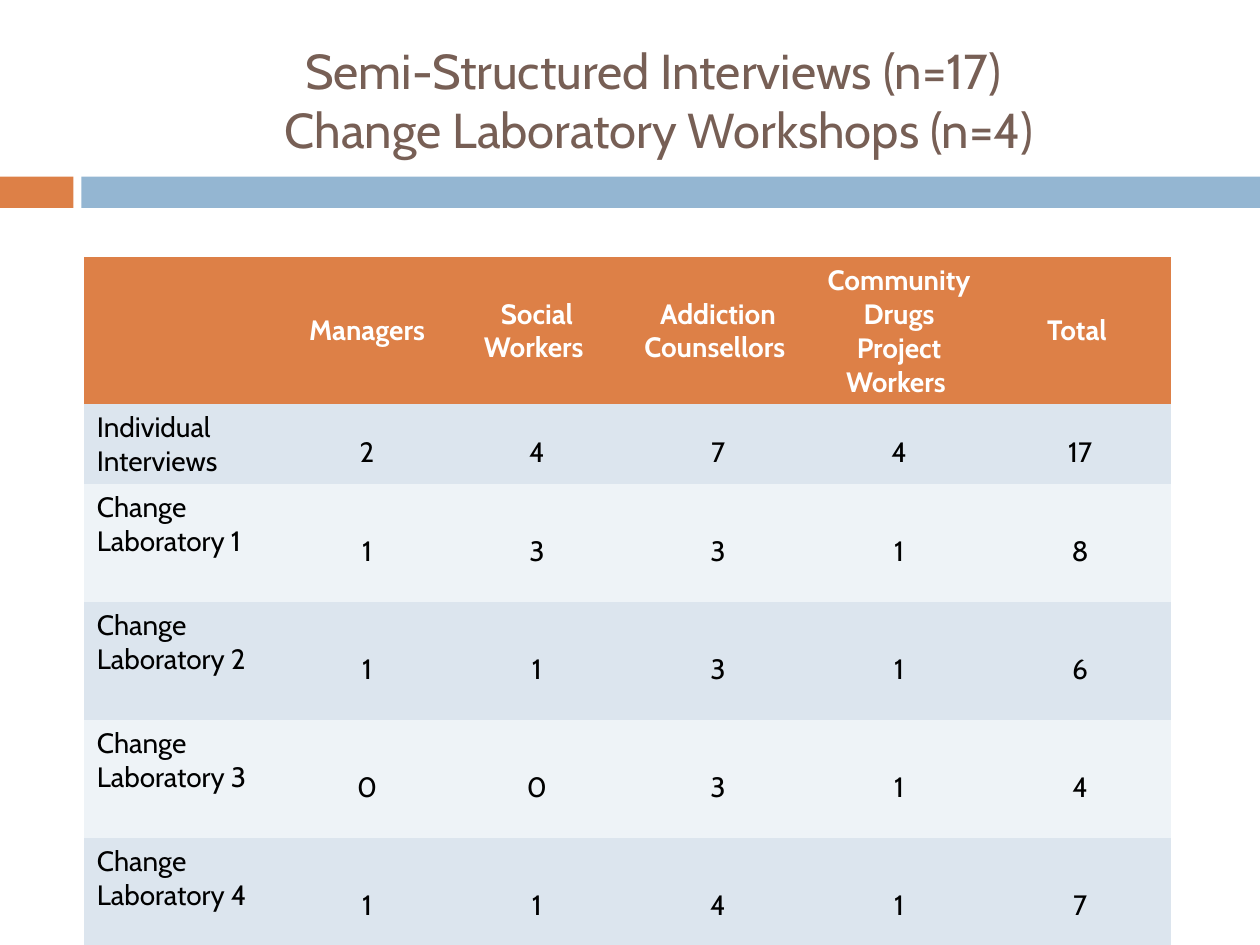
from dataclasses import dataclass

from pptx import Presentation
from pptx.dml.color import RGBColor
from pptx.enum.shapes import MSO_SHAPE
from pptx.enum.text import MSO_ANCHOR, PP_ALIGN
from pptx.oxml.ns import qn
from pptx.util import Cm, Pt

RECT = MSO_SHAPE.RECTANGLE
TOP, MIDDLE = MSO_ANCHOR.TOP, MSO_ANCHOR.MIDDLE
LEFT, CENTER = PP_ALIGN.LEFT, PP_ALIGN.CENTER
NO_GRID_STYLE = "{2D5ABB26-0587-4C30-8999-92F81FD0307C}"


@dataclass(frozen=True)
class Theme:
    font: str = "Cabin"
    title_size: int = 28
    table_size: int = 16
    title: str = "775F55"
    accent: str = "DD8047"
    bar: str = "94B6D2"
    header_text: str = "FFFFFF"
    body_text: str = "000000"
    bands: tuple = ("DCE5EE", "EEF3F7")


class SlideBuilder:
    def __init__(self, slide, theme):
        self.slide = slide
        self.theme = theme

    def format_text(self, tf, size, color, align, bold=False, spacing=None):
        for p in tf.paragraphs:
            p.alignment = align
            if spacing:
                p.line_spacing = spacing
            for r in p.runs:
                r.font.name = self.theme.font
                r.font.size = Pt(size)
                r.font.bold = bold
                r.font.color.rgb = RGBColor.from_string(color)

    def bar(self, left, top, width, height, color):
        sp = self.slide.shapes.add_shape(
            RECT, Cm(left), Cm(top), Cm(width), Cm(height))
        sp.shadow.inherit = False
        sp.fill.solid()
        sp.fill.fore_color.rgb = RGBColor.from_string(color)
        sp.line.fill.background()

    def title(self, text, left, top, width, height):
        sp = self.slide.shapes.add_textbox(
            Cm(left), Cm(top), Cm(width), Cm(height))
        tf = sp.text_frame
        tf.word_wrap = True
        tf.vertical_anchor = MIDDLE
        tf.text = text
        self.format_text(tf, self.theme.title_size, self.theme.title, CENTER)

    def cell(self, cell, text, fill, anchor, **style):
        cell.fill.solid()
        cell.fill.fore_color.rgb = RGBColor.from_string(fill)
        cell.vertical_anchor = anchor
        cell.text_frame.text = text
        self.format_text(cell.text_frame, self.theme.table_size, **style)

    def table(self, header, rows, left, top, widths, heights):
        t = self.theme
        sp = self.slide.shapes.add_table(
            len(heights), len(widths), Cm(left), Cm(top),
            Cm(sum(widths)), Cm(sum(heights)))
        for style_id in sp._element.iter(qn("a:tableStyleId")):
            style_id.text = NO_GRID_STYLE
        table = sp.table
        for column, width in zip(table.columns, widths):
            column.width = Cm(width)
        for row, height in zip(table.rows, heights):
            row.height = Cm(height)

        # Header row
        for c, text in enumerate(header):
            self.cell(table.cell(0, c), text, t.accent, MIDDLE,
                      color=t.header_text, align=CENTER, bold=True)

        # Banded body rows: label first, then counts
        for i, (label, *counts) in enumerate(rows):
            fill = t.bands[i % 2]
            self.cell(table.cell(i + 1, 0), label, fill, TOP,
                      color=t.body_text, align=LEFT)
            for c, count in enumerate(counts, 1):
                cell = table.cell(i + 1, c)
                cell.margin_left = cell.margin_right = Cm(0.18)
                cell.margin_top = cell.margin_bottom = 0
                self.cell(cell, str(count), fill, MIDDLE,
                          color=t.body_text, align=CENTER, spacing=1.5)


def main():
    prs = Presentation()
    prs.slide_width, prs.slide_height = Cm(25.4), Cm(19.05)
    theme = Theme()
    s = SlideBuilder(prs.slides.add_slide(prs.slide_layouts[6]), theme)

    # Divider bars
    s.bar(0, 3.56, 1.48, 0.63, theme.accent)
    s.bar(1.64, 3.56, 23.76, 0.63, theme.bar)

    # Title
    s.title("Semi-Structured Interviews (n=17) \v"
            "Change Laboratory Workshops (n=4)", 1.95, 0.64, 22.66, 2.74)

    # Participants by role
    header = ["", "Managers", "Social Workers ", "Addiction Counsellors ",
              "Community Drugs Project Workers ", "Total "]
    rows = [
        ("Individual\nInterviews", 2, 4, 7, 4, 17),
        ("Change Laboratory 1", 1, 3, 3, 1, 8),
        ("Change Laboratory 2", 1, 1, 3, 1, 6),
        ("Change Laboratory 3", 0, 0, 3, 1, 4),
        ("Change Laboratory 4", 1, 1, 4, 1, 7),
    ]
    s.table(header, rows, 1.7, 5.19,
            widths=[4.1, 3.2] + [3.65] * 4,
            heights=[2.26, 1.52] + [2.38] * 4)

    prs.save("out.pptx")


if __name__ == "__main__":
    main()
